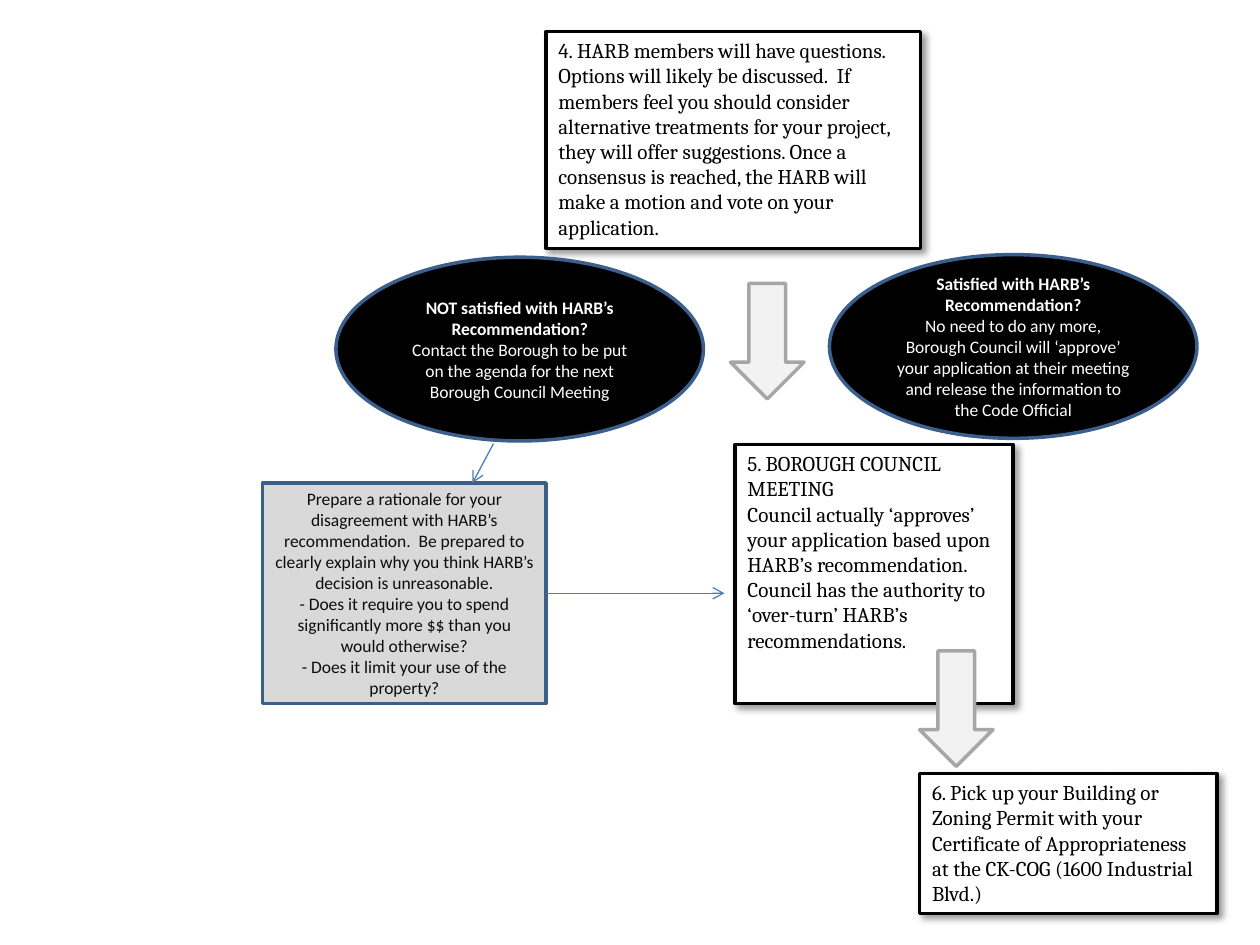
from lxml import etree
from pptx import Presentation
from pptx.dml.color import RGBColor
from pptx.enum.shapes import MSO_CONNECTOR, MSO_SHAPE
from pptx.enum.text import MSO_ANCHOR, MSO_AUTO_SIZE, PP_ALIGN
from pptx.oxml.ns import qn
from pptx.util import Pt

RECT, OVAL, DOWN = MSO_SHAPE.RECTANGLE, MSO_SHAPE.OVAL, MSO_SHAPE.DOWN_ARROW
STRAIGHT = MSO_CONNECTOR.STRAIGHT
LEFT, CENTER = PP_ALIGN.LEFT, PP_ALIGN.CENTER
TOP, MIDDLE = MSO_ANCHOR.TOP, MSO_ANCHOR.MIDDLE
GROW, FIXED = MSO_AUTO_SIZE.SHAPE_TO_FIT_TEXT, MSO_AUTO_SIZE.NONE
RIGHT_SIDE = 3

THEME = {
    "step": dict(shape=RECT, fill="FFFFFF", line="000000", color="000000", font="Cambria",
                 size=12, align=LEFT, anchor=TOP, fit=GROW, shadow=True, lead_bold=False),
    "outcome": dict(shape=OVAL, fill="000000", line="3A5F8C", color="FFFFFF", font="Calibri",
                    size=10, align=CENTER, anchor=MIDDLE, fit=FIXED, shadow=False, lead_bold=True),
    "rationale": dict(shape=RECT, fill="D9D9D9", line="3A5F8C", color="0D0D0D", font="Calibri",
                      size=10, align=CENTER, anchor=MIDDLE, fit=FIXED, shadow=False, lead_bold=False),
    "arrow": dict(shape=DOWN, fill="F2F2F2", line="A6A6A6", shadow=False),
    "outline": 2,
    "connector": dict(color="4B7EBC", width=0.75),
}

ARROW_SIZE = (42, 66)
OVAL_SIZE = (210, 105)

STEPS = [
    ((312, 18, 214, 124), [
        "4. HARB members will have questions.  Options will likely be discussed.  If members feel "
        "you should consider alternative treatments for your project, they will offer suggestions. "
        "Once a consensus is reached, the HARB will make a motion and vote on your application."]),
    ((420, 254, 159, 148), [
        "5. BOROUGH COUNCIL MEETING",
        "Council actually ‘approves’ your application based upon HARB’s recommendation.  "
        "Council has the authority to ‘over-turn’ HARB’s recommendations."]),
    ((525.5, 442, 170, 80), [
        "6. Pick up your Building or Zoning Permit with your Certificate of Appropriateness "
        "at the CK-COG (1600 Industrial Blvd.)"]),
]
ARROWS = [(417.5, 162), (525.5, 372)]
OUTCOMES = [
    ((474, 145.5), [
        "Satisfied with HARB’s Recommendation?",
        "No need to do any more, Borough Council will ‘approve’ your application at their "
        "meeting and release the information to the Code Official"]),
    ((192, 147), [
        "NOT satisfied with HARB’s Recommendation?",
        "Contact the Borough to be put on the agenda for the next Borough Council Meeting"]),
]
RATIONALE = ((150, 276, 162, 126), [
    "Prepare a rationale for your disagreement with HARB’s recommendation.  Be prepared to "
    "clearly explain why you think HARB’s decision is unreasonable.",
    "- Does it require you to spend significantly more $$ than you would otherwise?",
    "- Does it limit your use of the property?"])
TO_RATIONALE = (282, 253.5, 270, 276)
TO_COUNCIL = (312, 339, 414, 339)


def add_shadow(s):
    effects = s._element.spPr.find(qn("a:effectLst"))
    shadow = etree.SubElement(effects, qn("a:outerShdw"), blurRad=str(Pt(4)), dist=str(Pt(3)),
                              dir=str(45 * 60000), algn="tl", rotWithShape="0")
    color = etree.SubElement(shadow, qn("a:srgbClr"), val="000000")
    etree.SubElement(color, qn("a:alpha"), val="40000")


def add_block(slide, kind, box, paragraphs=()):
    style = THEME[kind]
    s = slide.shapes.add_shape(style["shape"], *map(Pt, box))
    s.shadow.inherit = False
    s.fill.solid()
    s.fill.fore_color.rgb = RGBColor.from_string(style["fill"])
    s.line.color.rgb = RGBColor.from_string(style["line"])
    s.line.width = Pt(THEME["outline"])
    if style["shadow"]:
        add_shadow(s)
    if paragraphs:
        fill_text(s.text_frame, style, paragraphs)
    return s


def fill_text(tf, style, paragraphs):
    settings = dict(word_wrap=True, auto_size=style["fit"], vertical_anchor=style["anchor"])
    for name, value in settings.items():
        setattr(tf, name, value)
    for i, text in enumerate(paragraphs):
        p = tf.paragraphs[0] if i == 0 else tf.add_paragraph()
        p.alignment = style["align"]
        r = p.add_run()
        r.text = text
        font = dict(name=style["font"], size=Pt(style["size"]), bold=style["lead_bold"] and i == 0)
        for name, value in font.items():
            setattr(r.font, name, value)
        r.font.color.rgb = RGBColor.from_string(style["color"])


def add_arrow_line(slide, ends):
    c = slide.shapes.add_connector(STRAIGHT, *map(Pt, ends))
    c.line.color.rgb = RGBColor.from_string(THEME["connector"]["color"])
    c.line.width = Pt(THEME["connector"]["width"])
    etree.SubElement(c.line._get_or_add_ln(), qn("a:tailEnd"), type="arrow")
    etree.SubElement(c._element.spPr, qn("a:effectLst"))
    return c


def main():
    prs = Presentation()
    prs.slide_width, prs.slide_height = Pt(720), Pt(540)
    slide = prs.slides.add_slide(prs.slide_layouts[6])
    for box, paragraphs in STEPS:
        add_block(slide, "step", box, paragraphs)
    for corner in ARROWS:
        add_block(slide, "arrow", corner + ARROW_SIZE)
    for corner, paragraphs in OUTCOMES:
        add_block(slide, "outcome", corner + OVAL_SIZE, paragraphs)
    rationale = add_block(slide, "rationale", *RATIONALE)
    add_arrow_line(slide, TO_RATIONALE)
    add_arrow_line(slide, TO_COUNCIL).begin_connect(rationale, RIGHT_SIDE)
    prs.save("out.pptx")


if __name__ == "__main__":
    main()
